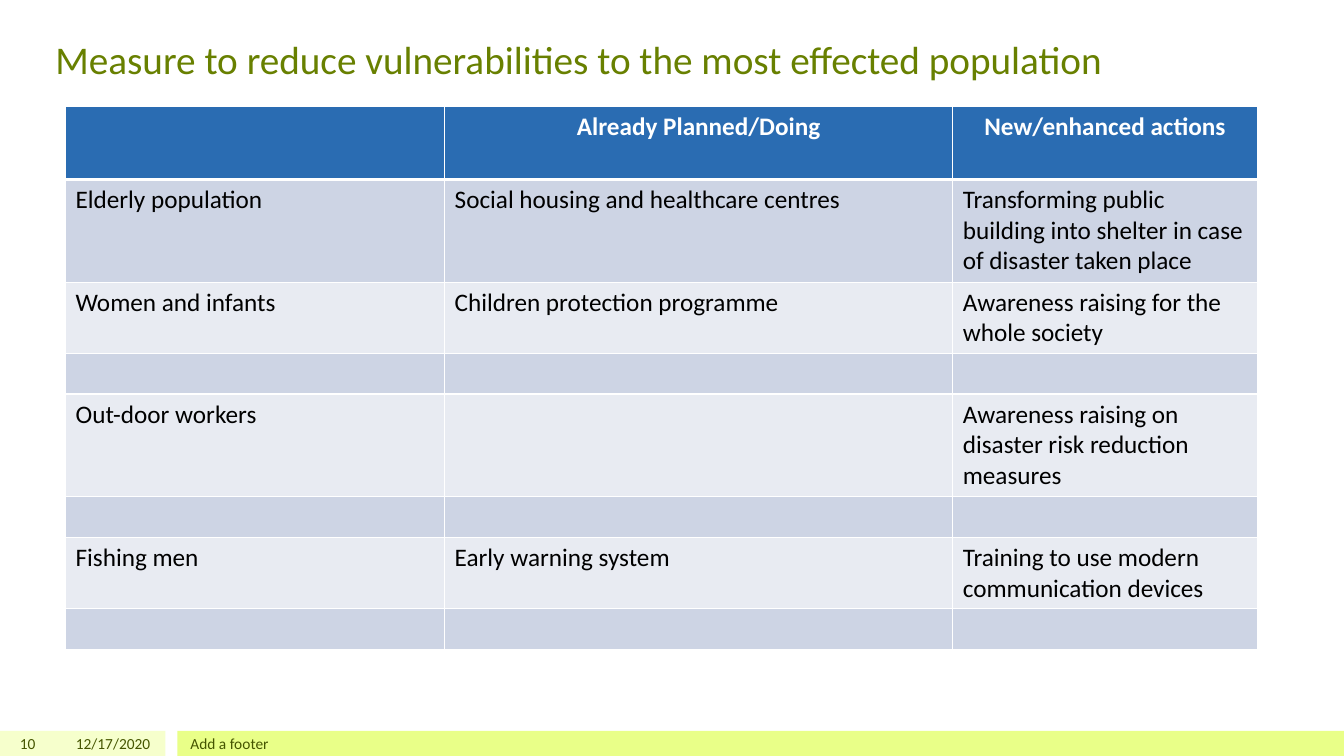
"""Build a slide tabulating measures that reduce vulnerabilities."""
from dataclasses import dataclass

from lxml.etree import SubElement
from pptx import Presentation
from pptx.dml.color import RGBColor
from pptx.enum.shapes import MSO_SHAPE
from pptx.enum.text import MSO_ANCHOR, MSO_AUTO_SIZE, PP_ALIGN
from pptx.oxml.ns import qn
from pptx.util import Inches, Pt

FONT = "Calibri"
WHITE = RGBColor(0xFF, 0xFF, 0xFF)
BLACK = RGBColor(0x00, 0x00, 0x00)
OLIVE = RGBColor(0x68, 0x80, 0x00)
DARK_OLIVE = RGBColor(0x45, 0x55, 0x00)
PALE_LIME = RGBColor(0xF6, 0xFF, 0xCC)
LIME = RGBColor(0xE9, 0xFF, 0x88)
BLUE = RGBColor(0x2A, 0x6C, 0xB2)
BANDS = (RGBColor(0xE8, 0xEB, 0xF2), RGBColor(0xCD, 0xD4, 0xE4))

FOOTER_TOP, FOOTER_HEIGHT = 7.25, 0.25
COLUMN_WIDTHS = (3.76, 5.04, 3.02)


@dataclass
class Bar:
    left: float
    width: float
    color: RGBColor


@dataclass
class FooterItem:
    left: float
    width: float
    text: str
    align: PP_ALIGN


@dataclass
class Row:
    height: float
    texts: tuple = ("", "", "")


BARS = (Bar(0, 1.64, PALE_LIME), Bar(1.76, 11.57, LIME))
FOOTER_ITEMS = (
    FooterItem(0, 0.45, "10", PP_ALIGN.RIGHT),
    FooterItem(0.5, 1.09, "12/17/2020", PP_ALIGN.RIGHT),
    FooterItem(1.79, 10, "Add a footer", PP_ALIGN.LEFT),
)
ROWS = (
    Row(0.72, ("", "Already Planned/Doing", "New/enhanced actions")),
    Row(1.02, ("Elderly population", "Social housing and healthcare centres",
               "Transforming public building into shelter in case of disaster taken place")),
    Row(0.71, ("Women and infants", "Children protection programme",
               "Awareness raising for the whole society")),
    Row(0.4),
    Row(1.02, ("Out-door workers", "",
               "Awareness raising on disaster risk reduction measures")),
    Row(0.4),
    Row(0.71, ("Fishing men", "Early warning system",
               "Training to use modern communication devices")),
    Row(0.4),
)


def write(tf, text: str, *, size: float, color: RGBColor, bold: bool = False,
          align: PP_ALIGN = PP_ALIGN.LEFT) -> None:
    p = tf.paragraphs[0]
    p.alignment = align
    r = p.add_run()
    r.text = text
    r.font.name = FONT
    r.font.size = Pt(size)
    r.font.bold = bold
    r.font.color.rgb = color


def add_bar(s, bar: Bar) -> None:
    sp = s.shapes.add_shape(MSO_SHAPE.RECTANGLE, Inches(bar.left), Inches(FOOTER_TOP),
                            Inches(bar.width), Inches(FOOTER_HEIGHT))
    sp.shadow.inherit = False
    sp.fill.solid()
    sp.fill.fore_color.rgb = bar.color
    sp.line.fill.background()


def add_footer_item(s, item: FooterItem) -> None:
    sp = s.shapes.add_textbox(Inches(item.left), Inches(FOOTER_TOP),
                              Inches(item.width), Inches(FOOTER_HEIGHT))
    tf = sp.text_frame
    tf.word_wrap = True
    tf.vertical_anchor = MSO_ANCHOR.MIDDLE
    write(tf, item.text, size=11, color=DARK_OLIVE, align=item.align)


def set_borders(cell, top: float, bottom: float) -> None:
    tc_pr = cell._tc.get_or_add_tcPr()
    for tag, width in (("lnL", 1), ("lnR", 1), ("lnT", top), ("lnB", bottom)):
        ln = SubElement(tc_pr, qn(f"a:{tag}"), w=str(Pt(width)))
        fill = SubElement(ln, qn("a:solidFill"))
        SubElement(fill, qn("a:srgbClr"), val=str(WHITE))


def add_measures(s) -> None:
    frame = s.shapes.add_table(len(ROWS), len(COLUMN_WIDTHS), Inches(0.65), Inches(1.06),
                               Inches(sum(COLUMN_WIDTHS)),
                               Inches(sum(row.height for row in ROWS)))
    table = frame.table
    for column, width in zip(table.columns, COLUMN_WIDTHS):
        column.width = Inches(width)
    for i, row in enumerate(ROWS):
        header = i == 0
        table.rows[i].height = Inches(row.height)
        for j, text in enumerate(row.texts):
            cell = table.cell(i, j)
            set_borders(cell, top=3 if i == 1 else 1, bottom=3 if header else 1)
            cell.fill.solid()
            cell.fill.fore_color.rgb = BLUE if header else BANDS[i % 2]
            if text:
                write(cell.text_frame, text, size=18, bold=header,
                      color=WHITE if header else BLACK,
                      align=PP_ALIGN.CENTER if header else PP_ALIGN.LEFT)


def add_title(s, text: str) -> None:
    sp = s.shapes.title
    sp.left, sp.top, sp.width, sp.height = map(Inches, (0.45, 0.3, 12.55, 0.79))
    tf = sp.text_frame
    tf.word_wrap = True
    tf.auto_size = MSO_AUTO_SIZE.NONE
    tf.vertical_anchor = MSO_ANCHOR.TOP
    write(tf, text, size=28, color=OLIVE)


def main() -> None:
    prs = Presentation()
    prs.slide_width, prs.slide_height = Inches(13.33), Inches(7.5)
    s = prs.slides.add_slide(prs.slide_layouts[5])
    for bar in BARS:
        add_bar(s, bar)
    for item in FOOTER_ITEMS:
        add_footer_item(s, item)
    add_measures(s)
    add_title(s, "Measure to reduce vulnerabilities to the most effected population")
    prs.save("out.pptx")


if __name__ == "__main__":
    main()
